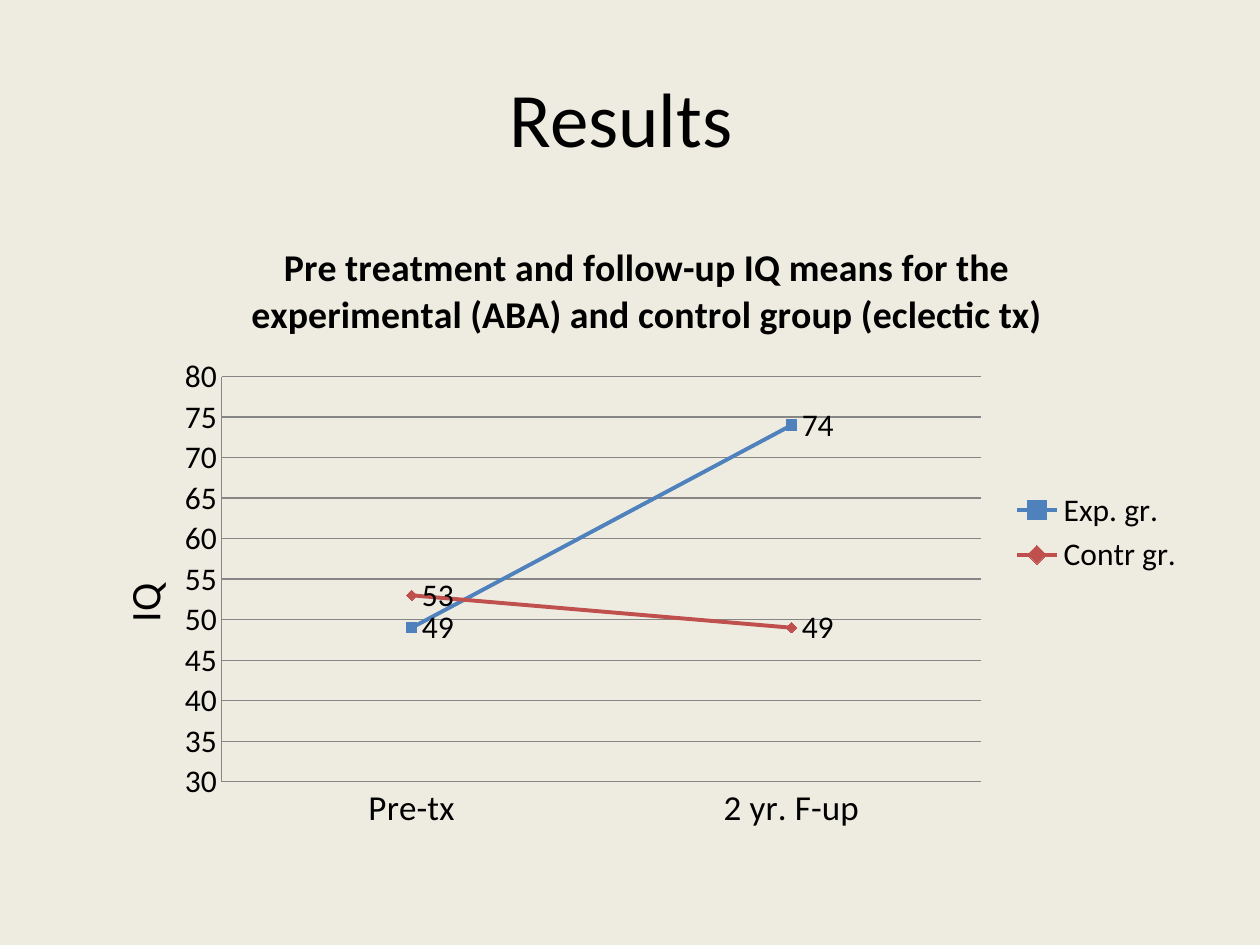
import pptx
import pptx.chart.data
import pptx.dml.color
import pptx.enum.chart
import pptx.enum.text
import pptx.oxml
import pptx.oxml.ns
import pptx.util
from pptx.util import Cm

FONT = "Calibri"
COLORS = {
    "background": "EEECE1",
    "text": "000000",
    "grid": "868686",
    "experimental": "4F81BD",
    "control": "C0504D",
}
MARKERS = pptx.enum.chart.XL_MARKER_STYLE
GROUPS = [
    ("Exp. gr.", (49, 74), "experimental", MARKERS.SQUARE),
    ("Contr gr.", (53, 49), "control", MARKERS.DIAMOND),
]


def color(name):
    return pptx.dml.color.RGBColor.from_string(COLORS[name])


def format_font(font, size, bold=False):
    font.name = FONT
    font.size = pptx.util.Pt(size)
    font.bold = bold
    font.color.rgb = color("text")


def write_text(text_frame, text, size, bold=False, align=None):
    paragraph = text_frame.paragraphs[0]
    paragraph.alignment = align
    run = paragraph.add_run()
    run.text = text
    format_font(run.font, size, bold)


def format_line(line, name, width):
    line.color.rgb = color(name)
    line.width = pptx.util.Pt(width)


def set_layout(element, index, inner=False, **fractions):
    """Place a chart part at fractions of the chart's width and height."""
    for old in element.findall(pptx.oxml.ns.qn("c:layout")):
        element.remove(old)
    target = '<c:layoutTarget val="inner"/>' if inner else ""
    modes = "".join(f'<c:{key}Mode val="edge"/>' for key in "xy")
    values = "".join(f'<c:{key} val="{value}"/>' for key, value in fractions.items())
    layout = pptx.oxml.parse_xml(
        f'<c:layout {pptx.oxml.ns.nsdecls("c")}><c:manualLayout>'
        f"{target}{modes}{values}</c:manualLayout></c:layout>"
    )
    element.insert(index, layout)


def place_title(slide, left, top, width, height):
    title = slide.shapes.title
    title.left, title.top, title.width, title.height = left, top, width, height
    title.text_frame.vertical_anchor = pptx.enum.text.MSO_ANCHOR.MIDDLE
    write_text(title.text_frame, "Results ", size=44,
               align=pptx.enum.text.PP_ALIGN.CENTER)


def format_axes(chart):
    for axis, size in ((chart.category_axis, 20), (chart.value_axis, 18)):
        axis.major_tick_mark = pptx.enum.chart.XL_TICK_MARK.NONE
        axis.minor_tick_mark = pptx.enum.chart.XL_TICK_MARK.NONE
        format_font(axis.tick_labels.font, size)
        format_line(axis.format.line, "grid", 0.75)
    value_axis = chart.value_axis
    value_axis.minimum_scale = 30
    value_axis.maximum_scale = 80
    value_axis.major_unit = 5
    value_axis.has_major_gridlines = True
    format_line(value_axis.major_gridlines.format.line, "grid", 0.75)
    write_text(value_axis.axis_title.text_frame, "IQ", size=24)
    set_layout(value_axis.axis_title._element, 1, x=0.04, y=0.57)


def format_series(series, color_name, marker_style):
    series.smooth = False
    format_line(series.format.line, color_name, 2.25)
    marker = series.marker
    marker.style = marker_style
    marker.size = 6
    marker.format.fill.solid()
    marker.format.fill.fore_color.rgb = color(color_name)
    marker.format.line.color.rgb = color(color_name)
    labels = series.data_labels
    labels.show_value = True
    labels.position = pptx.enum.chart.XL_LABEL_POSITION.RIGHT
    format_font(labels.font, 18)


def place_iq_chart(slide, left, top, width, height):
    data = pptx.chart.data.CategoryChartData()
    data.categories = ["Pre-tx", "2 yr. F-up"]
    for name, means, _, _ in GROUPS:
        data.add_series(name, means)
    chart = slide.shapes.add_chart(
        pptx.enum.chart.XL_CHART_TYPE.LINE_MARKERS, left, top, width, height, data
    ).chart
    format_font(chart.font, 18)
    chart.plots[0].vary_by_categories = False

    write_text(
        chart.chart_title.text_frame,
        "Pre treatment and follow-up IQ means for the "
        "experimental (ABA) and control group (eclectic tx)",
        size=21.6, bold=True, align=pptx.enum.text.PP_ALIGN.CENTER,
    )
    chart.chart_title.include_in_layout = False
    set_layout(chart.chart_title._element, 1, x=0.16, y=0.02)

    chart.has_legend = True
    chart.legend.position = pptx.enum.chart.XL_LEGEND_POSITION.RIGHT
    chart.legend.include_in_layout = False
    format_font(chart.legend.font, 18)

    format_axes(chart)
    for series, (_, _, color_name, marker_style) in zip(chart.plots[0].series, GROUPS):
        format_series(series, color_name, marker_style)
    plot_area = chart._chartSpace.chart.plotArea
    set_layout(plot_area, 0, inner=True, x=0.14, y=0.25, w=0.67, h=0.65)


def main():
    presentation = pptx.Presentation()
    presentation.slide_width = Cm(25.4)
    presentation.slide_height = Cm(19.05)
    slide = presentation.slides.add_slide(presentation.slide_layouts[5])
    slide.background.fill.solid()
    slide.background.fill.fore_color.rgb = color("background")

    margin = Cm(1.27)
    content_width = presentation.slide_width - 2 * margin
    place_title(slide, margin, Cm(0.76), content_width, Cm(3.18))
    place_iq_chart(slide, margin, Cm(4.45), content_width, Cm(12.57))
    presentation.save("out.pptx")


if __name__ == "__main__":
    main()
